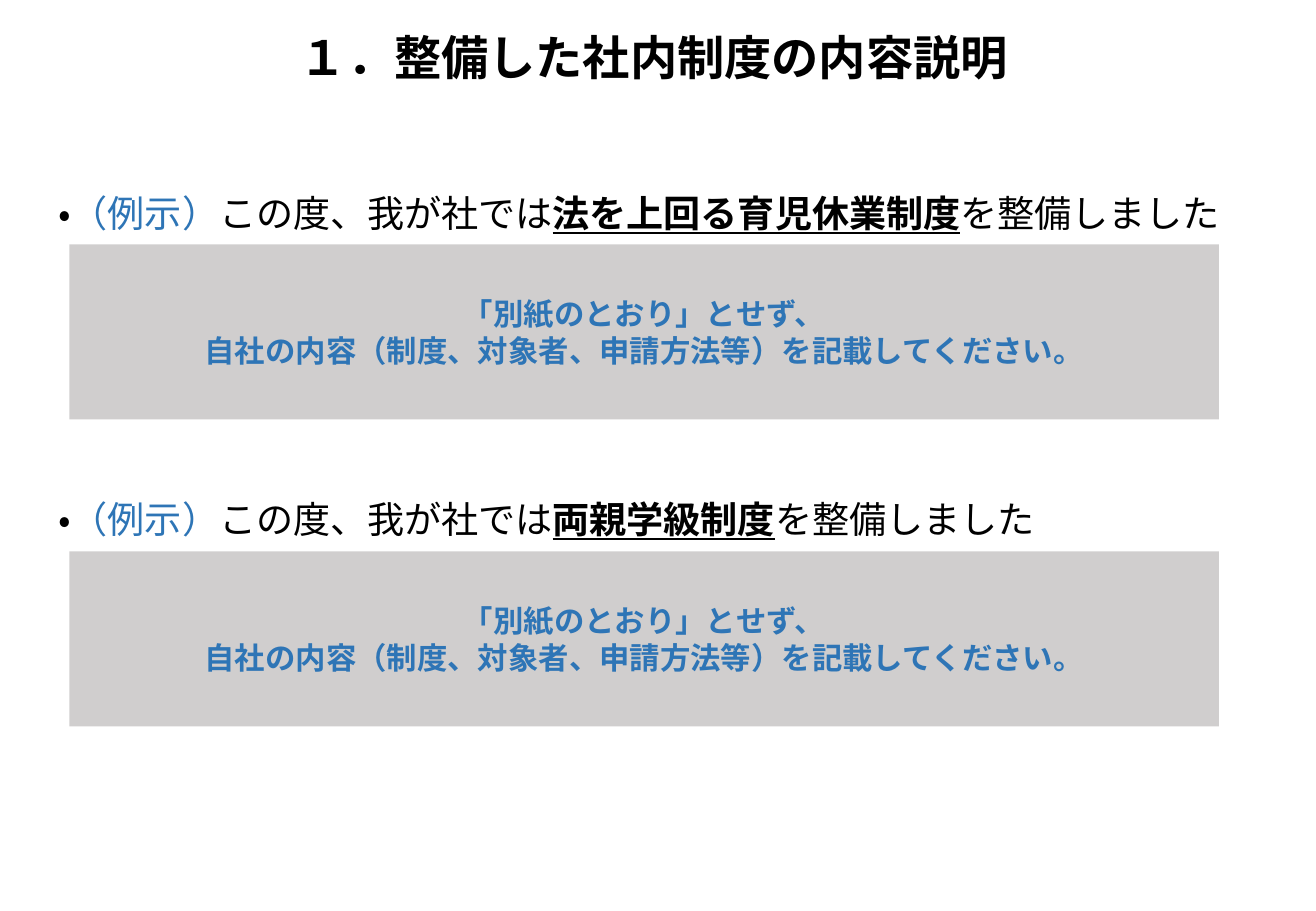
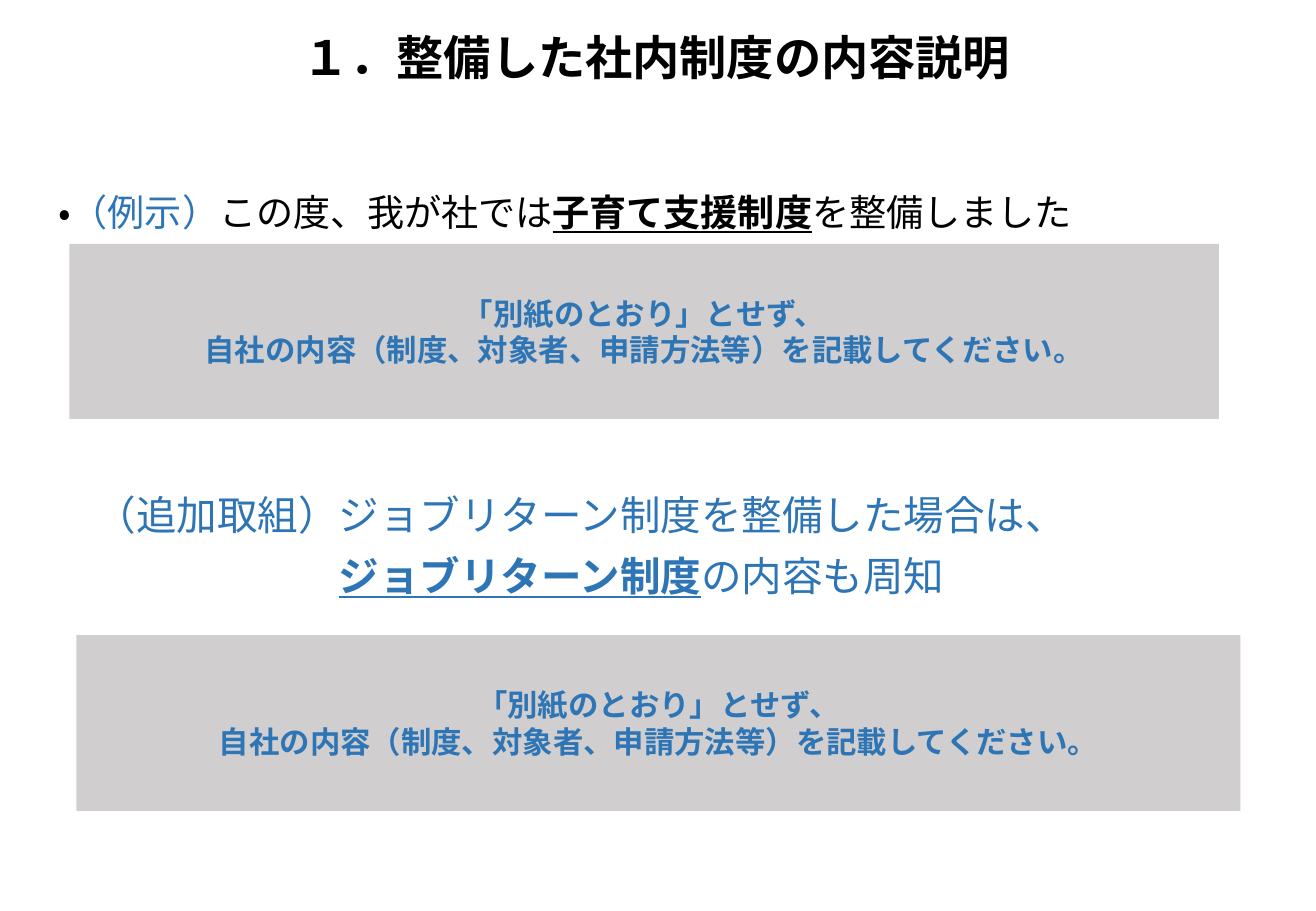
import pptx
import pptx.util
import pptx.dml.color
import pptx.enum.lang
import pptx.enum.shapes
import pptx.enum.text

Cm = pptx.util.Cm
Pt = pptx.util.Pt
RGBColor = pptx.dml.color.RGBColor
PP_ALIGN = pptx.enum.text.PP_ALIGN
MSO_ANCHOR = pptx.enum.text.MSO_ANCHOR
MSO_AUTO_SIZE = pptx.enum.text.MSO_AUTO_SIZE

BLACK = RGBColor(0x00, 0x00, 0x00)
BLUE = RGBColor(0x2E, 0x75, 0xB6)
GRAY = RGBColor(0xD0, 0xCE, 0xCE)

TITLE = "１．整備した社内制度の内容説明"
NOTICE = ["「別紙のとおり」とせず、", "自社の内容（制度、対象者、申請方法等）を記載してください。"]

TITLE_FORMAT = {"name": "Arial", "size": Pt(28), "color": BLACK, "bold": True}
NOTICE_FORMAT = {"name": "Calibri", "size": Pt(18), "color": BLUE, "bold": True}
EXAMPLE_FORMAT = {"name": "Arial", "size": Pt(22), "color": BLACK}
EXTRA_FORMAT = {"name": "Calibri", "size": Pt(24), "color": BLUE}
EMPHASIS = {"bold": True, "underline": True}

EXTRA_LINES = [
    [("（追加取組）ジョブリターン制度を整備した場合は、", {})],
    [("ジョブリターン制度", EMPHASIS), ("の内容も周知", {})],
]
EXTRA_INDENT = 6 * EXTRA_FORMAT["size"]

NOTICE_SIZE = (24.03, 3.66)
SLIDES = [
    {
        "title_left": 6.02,
        "examples": [
            ("法を上回る育児休業制度", (0.97, 3.96, 25.6, 1.12)),
            ("両親学級制度", (0.97, 10.36, 21.67, 1.12)),
        ],
        "notices": [(1.45, 5.11, *NOTICE_SIZE), (1.45, 11.53, *NOTICE_SIZE)],
    },
    {
        "title_left": 6.07,
        "examples": [("子育て支援制度", (0.97, 3.94, 22.45, 1.12))],
        "extra": (1.75, 10.24, 21.03, 2.46),
        "notices": [(1.45, 5.1, *NOTICE_SIZE), (1.6, 13.28, 24.33, 3.68)],
    },
]


def add_run(paragraph, text, text_format):
    font = paragraph.add_run().font
    paragraph.runs[-1].text = text
    font.language_id = pptx.enum.lang.MSO_LANGUAGE_ID.JAPANESE
    for name, value in text_format.items():
        if name == "color":
            font.color.rgb = value
        else:
            setattr(font, name, value)


def write_lines(frame, lines, base_format, paragraph_format):
    for index, runs in enumerate(lines):
        paragraph = frame.add_paragraph() if index else frame.paragraphs[0]
        for name, value in paragraph_format.items():
            setattr(paragraph, name, value)
        for text, changes in runs:
            add_run(paragraph, text, {**base_format, **changes})


def add_text(slide, box, lines, base_format, anchor=MSO_ANCHOR.TOP, space_before=Pt(10)):
    frame = slide.shapes.add_textbox(*map(Cm, box)).text_frame
    frame.word_wrap = False
    frame.auto_size = MSO_AUTO_SIZE.SHAPE_TO_FIT_TEXT
    frame.vertical_anchor = anchor
    write_lines(frame, lines, base_format, {"line_spacing": 0.9, "space_before": space_before})
    return frame


def add_notice(slide, box):
    shape = slide.shapes.add_shape(pptx.enum.shapes.MSO_SHAPE.RECTANGLE, *map(Cm, box))
    shape.shadow.inherit = False
    shape.fill.solid()
    shape.fill.fore_color.rgb = GRAY
    shape.line.fill.background()
    shape.text_frame.word_wrap = True
    shape.text_frame.vertical_anchor = MSO_ANCHOR.MIDDLE
    lines = [[(text, {})] for text in NOTICE]
    write_lines(shape.text_frame, lines, NOTICE_FORMAT, {"alignment": PP_ALIGN.CENTER})


def add_example(slide, system, box):
    runs = [
        ("・", {}),
        ("（例示）", {"color": BLUE}),
        ("この度、我が社では", {}),
        (system, EMPHASIS),
        ("を整備しました", {}),
    ]
    add_text(slide, box, [runs], EXAMPLE_FORMAT)


def main():
    presentation = pptx.Presentation()
    presentation.slide_width = Cm(27.51)
    presentation.slide_height = Cm(19.05)
    for content in SLIDES:
        slide = presentation.slides.add_slide(presentation.slide_layouts[6])
        title_box = (content["title_left"], 0.58, 15.47, 1.35)
        add_text(slide, title_box, [[(TITLE, {})]], TITLE_FORMAT, MSO_ANCHOR.MIDDLE, Pt(0))
        for box in content["notices"]:
            add_notice(slide, box)
        for system, box in content["examples"]:
            add_example(slide, system, box)
        if "extra" in content:
            frame = add_text(slide, content["extra"], EXTRA_LINES, EXTRA_FORMAT)
            properties = frame.paragraphs[1]._p.get_or_add_pPr()
            properties.set("marL", str(EXTRA_INDENT))
    presentation.save("out.pptx")


if __name__ == "__main__":
    main()
